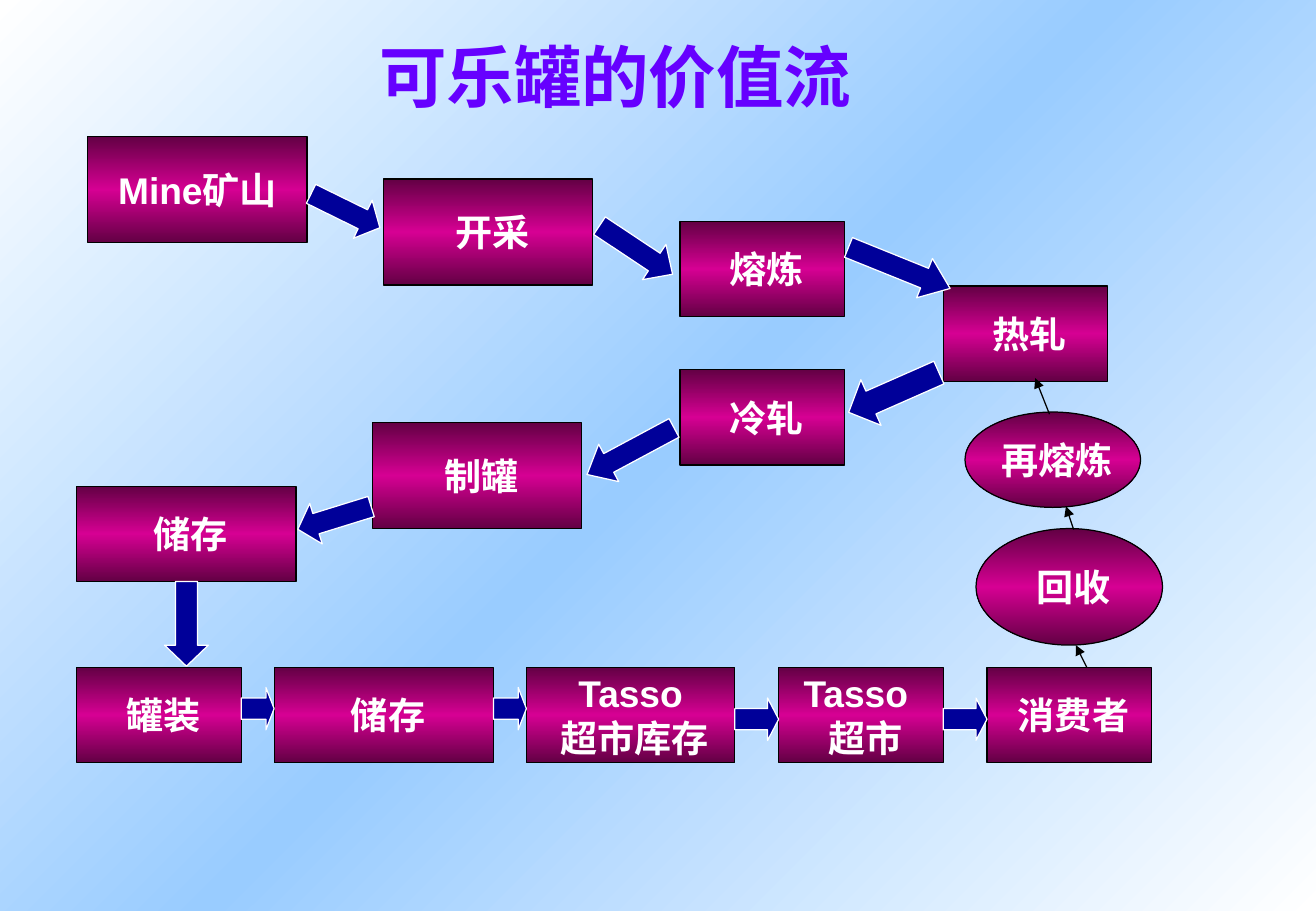
from copy import deepcopy

from lxml.etree import SubElement
from pptx import Presentation
from pptx.dml.color import RGBColor
from pptx.enum.shapes import MSO_CONNECTOR as Connector, MSO_SHAPE as Shape
from pptx.enum.text import MSO_ANCHOR as Anchor, PP_ALIGN as Align
from pptx.oxml.ns import qn
from pptx.util import Inches, Pt

TITLE = " 可乐罐的价值流"
STEPS = [
    (Shape.RECTANGLE, "Mine矿山", 8, 12.9, 20, 10),
    (Shape.RECTANGLE, " 开采", 35, 16.9, 19, 10),
    (Shape.RECTANGLE, " 熔炼", 62, 20.9, 15, 9),
    (Shape.RECTANGLE, " 热轧", 86, 27, 15, 9),
    (Shape.RECTANGLE, " 冷轧", 62, 34.9, 15, 9),
    (Shape.RECTANGLE, " 制罐", 34, 39.9, 19, 10),
    (Shape.RECTANGLE, " 储存", 7, 45.9, 20, 9),
    (Shape.RECTANGLE, " 罐装", 7, 63, 15, 9),
    (Shape.RECTANGLE, " 储存", 25, 63, 20, 9),
    (Shape.RECTANGLE, "Tasso\n 超市库存", 48, 63, 19, 9),
    (Shape.RECTANGLE, "Tasso \n 超市", 71, 63, 15, 9),
    (Shape.RECTANGLE, " 消费者", 90, 63, 15, 9),
    (Shape.OVAL, " 再熔炼", 88, 38.9, 16, 9),
    (Shape.OVAL, " 回收", 89, 49.9, 17, 11),
]
FLOWS = [
    (Shape.RIGHT_ARROW, 28, 17.9, 7, 4, 26.2, 0.45),
    (Shape.RIGHT_ARROW, 54, 21.6, 8, 4, 33.6, 0.52),
    (Shape.RIGHT_ARROW, 77, 23.3, 10, 4, 22, 0.65),
    (Shape.RIGHT_ARROW, 86, 65.9, 4, 4, 0, 0.26),
    (Shape.RIGHT_ARROW, 67, 65.9, 4, 4, 0, 0.26),
    (Shape.LEFT_ARROW, 53, 40.6, 9, 4, 331.8, 0.58),
    (Shape.LEFT_ARROW, 27, 46.9, 7, 4, 342.8, 0.45),
    (Shape.LEFT_ARROW, 77, 34.7, 9, 4.7, 336.2, 0.49),
    (Shape.RIGHT_ARROW, 45, 64.9, 3, 4, 0, 0.25),
    (Shape.RIGHT_ARROW, 22, 64.9, 3, 4, 0, 0.25),
    (Shape.DOWN_ARROW, 15, 54.9, 4, 8, 0, 0.48),
]
RECYCLING = [
    (95.7, 39.1, 94.4, 35.7),
    (97.9, 50, 97.2, 47.8),
    (99.1, 63, 98.1, 60.9),
]
WIDTH, HEIGHT = Inches(10.83), Inches(7.5)
COLUMNS, ROWS = 120, 86


def color(value):
    return RGBColor.from_string(value)


def grid(*lengths):
    units = (WIDTH / COLUMNS, HEIGHT / ROWS)
    return [round(length * units[i % 2]) for i, length in enumerate(lengths)]


def blend(fill, edge, middle, angle):
    fill.gradient()
    first = fill.gradient_stops[0]._gs
    first.addnext(deepcopy(first))
    for stop, place, value in zip(fill.gradient_stops, (0, 0.5, 1), (edge, middle, edge)):
        stop.position = place
        stop.color.rgb = color(value)
    fill.gradient_angle = angle


def write(frame, text, size=22, ink="FFFFFF", wrap=False):
    frame.word_wrap = wrap
    frame.vertical_anchor = Anchor.MIDDLE
    frame.text = text
    for paragraph in frame.paragraphs:
        paragraph.alignment = Align.CENTER
        for run in paragraph.runs:
            font = run.font
            font.name, font.size, font.bold = "Arial", Pt(size), True
            font.color.rgb = color(ink)


def outline(line, value):
    line.color.rgb = color(value)
    line.width = Pt(0.75)


def add_block(slide, kind, place, edge):
    block = slide.shapes.add_shape(kind, *grid(*place))
    block.shadow.inherit = False
    outline(block.line, edge)
    return block


def main():
    """Build the value stream slide."""
    deck = Presentation()
    deck.slide_width, deck.slide_height = WIDTH, HEIGHT
    slide = deck.slides.add_slide(deck.slide_layouts[6])
    blend(slide.background.fill, "FFFFFF", "99CCFF", 315)

    for kind, label, *place in STEPS:
        step = add_block(slide, kind, place, "000000")
        blend(step.fill, "630044", "D60093", 270)
        write(step.text_frame, label)

    for kind, *place, turn, head in FLOWS:
        flow = add_block(slide, kind, place, "FFFFFF")
        flow.fill.solid()
        flow.fill.fore_color.rgb = color("000099")
        flow.rotation = turn
        flow.adjustments[0], flow.adjustments[1] = 0.5, head

    for ends in RECYCLING:
        link = slide.shapes.add_connector(Connector.STRAIGHT, *grid(*ends))
        outline(link.line, "000000")
        SubElement(link.line._get_or_add_ln(), qn("a:tailEnd"), type="triangle")
        SubElement(link._element.spPr, qn("a:effectLst"))

    title = slide.shapes.add_textbox(0, 0, Inches(10), Inches(1.25))
    write(title.text_frame, TITLE, size=40, ink="6600FF", wrap=True)
    deck.save("out.pptx")


if __name__ == "__main__":
    main()
